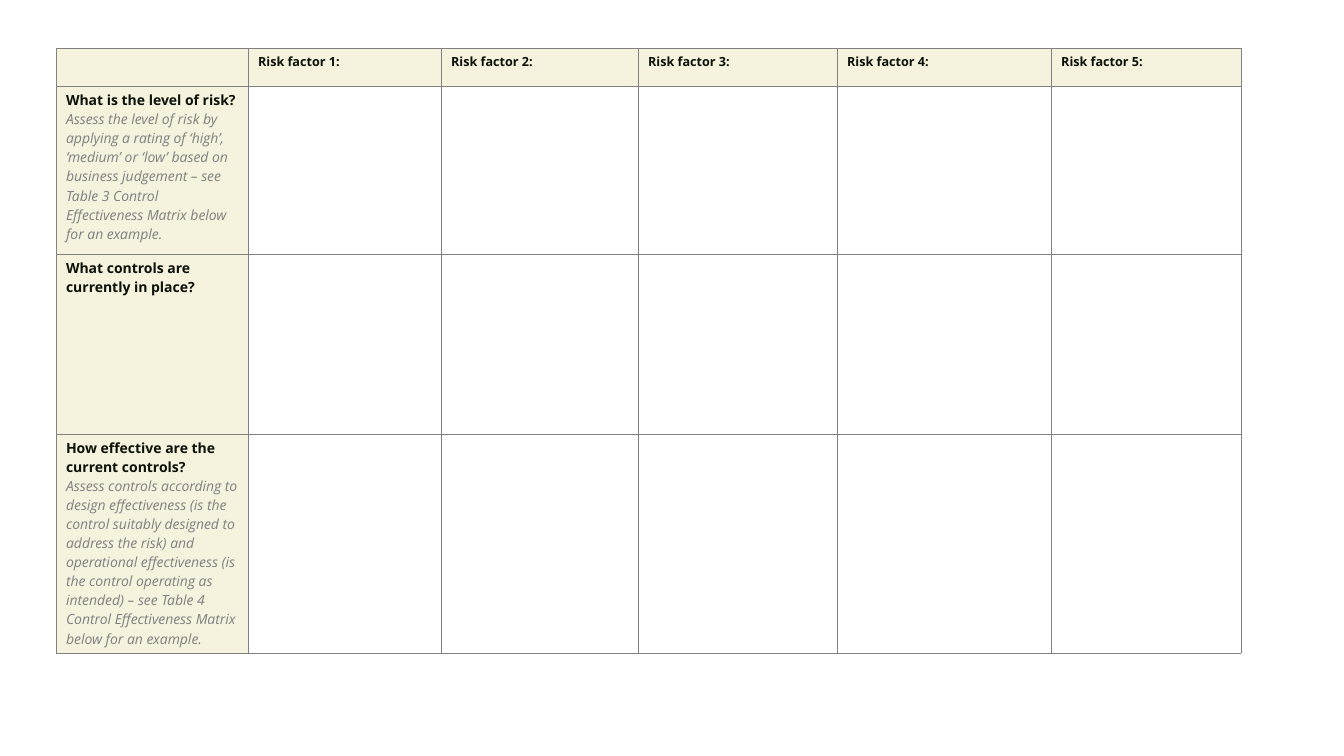
"""Build a risk assessment worksheet slide with five blank risk factor columns."""
from lxml import etree
from pptx import Presentation
from pptx import util as u
from pptx.dml.color import RGBColor
from pptx.oxml import ns

PX = 9071
CREAM = RGBColor(0xF5, 0xF2, 0xDE)
WHITE = RGBColor(0xFF, 0xFF, 0xFF)
INK = RGBColor(0x0B, 0x11, 0x07)
GREY = RGBColor(0x80, 0x80, 0x80)

COLUMN_WIDTHS = [192, 193, 197, 199, 214, 190]
ROW_HEIGHTS = [38, 168, 180, 185]
QUESTIONS = [
    ["What is the level of risk?",
     "Assess the level of risk by applying a rating of ‘high’, ‘medium’ or ‘low’ based on "
     "business judgement – see Table 3 Control Effectiveness Matrix below for an example."],
    ["What controls are currently in place?"],
    ["How effective are the current controls?",
     "Assess controls according to design effectiveness (is the control suitably designed to "
     "address the risk) and operational effectiveness (is the control operating as intended) "
     "– see Table 4 Control Effectiveness Matrix below for an example."],
]


def add_borders(cell):
    properties = cell._tc.get_or_add_tcPr()
    for side in ("a:lnL", "a:lnR", "a:lnT", "a:lnB"):
        line = etree.SubElement(properties, ns.qn(side), w=str(u.Pt(0.25)))
        fill = etree.SubElement(line, ns.qn("a:solidFill"))
        etree.SubElement(fill, ns.qn("a:srgbClr"), val=str(GREY))


prs = Presentation()
prs.slide_width = u.Inches(13.33)
prs.slide_height = u.Inches(7.5)
slide = prs.slides.add_slide(prs.slide_layouts[6])

worksheet = slide.shapes.add_table(
    len(ROW_HEIGHTS), len(COLUMN_WIDTHS), 56 * PX, 48 * PX,
    sum(COLUMN_WIDTHS) * PX, sum(ROW_HEIGHTS) * PX).table
for column, width in zip(worksheet.columns, COLUMN_WIDTHS):
    column.width = width * PX
for row, height in zip(worksheet.rows, ROW_HEIGHTS):
    row.height = height * PX

factors = [f"Risk factor {number}:" for number in range(1, len(COLUMN_WIDTHS))]
for factor_index, factor in enumerate(factors, 1):
    worksheet.cell(0, factor_index).text = factor
for question_index, lines in enumerate(QUESTIONS, 1):
    worksheet.cell(question_index, 0).text = "\n".join(lines)

for row_index, row in enumerate(worksheet.rows):
    for column_index, cell in enumerate(row.cells):
        add_borders(cell)
        cell.fill.solid()
        cell.fill.fore_color.rgb = CREAM if row_index == 0 or column_index == 0 else WHITE
        for line_index, paragraph in enumerate(cell.text_frame.paragraphs):
            is_hint = line_index > 0
            paragraph.font.name = "Open Sans"
            paragraph.font.size = u.Pt(9 if row_index == 0 else 10)
            paragraph.font.bold = not is_hint
            paragraph.font.italic = is_hint
            paragraph.font.color.rgb = GREY if is_hint else INK

prs.save("out.pptx")
